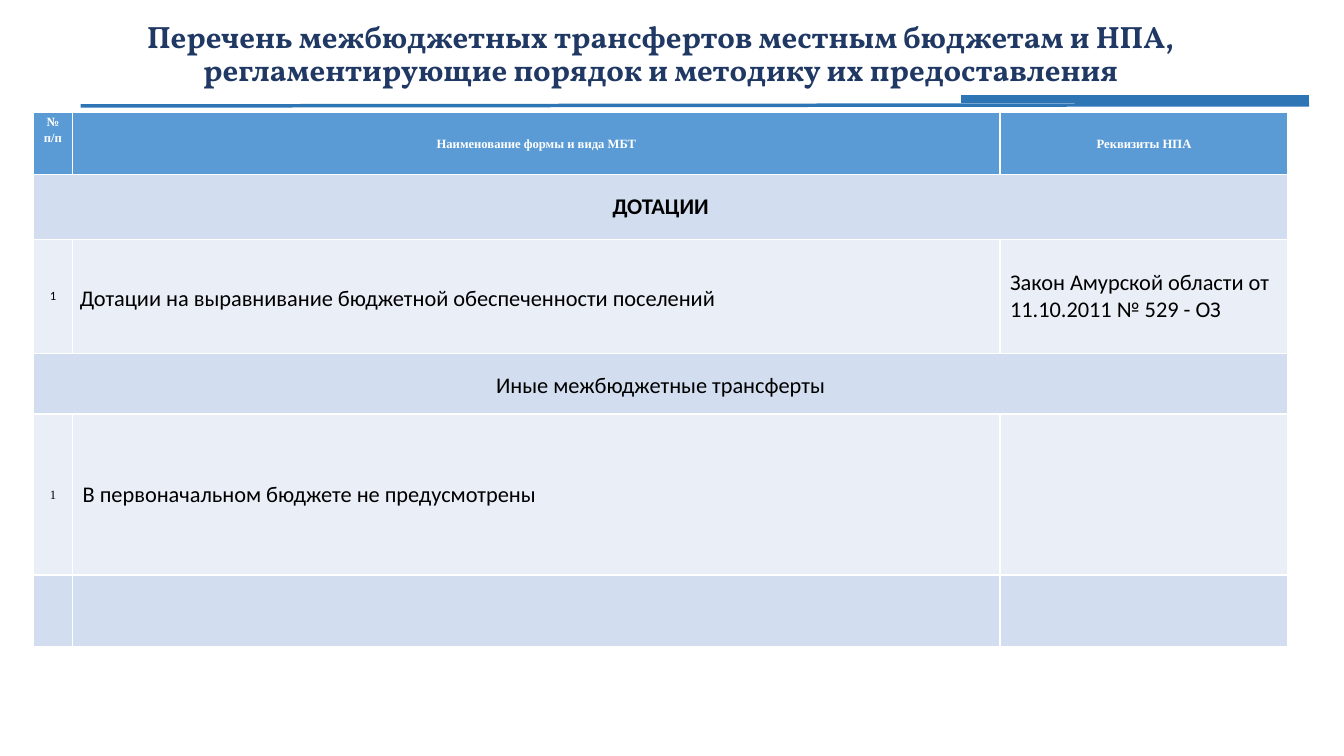
from lxml import etree
from pptx import Presentation
from pptx.dml.color import RGBColor
from pptx.enum.shapes import MSO_CONNECTOR
from pptx.enum.text import MSO_ANCHOR, PP_ALIGN
from pptx.oxml.ns import qn
from pptx.util import Cm, Pt

STRAIGHT = MSO_CONNECTOR.STRAIGHT
TOP, MIDDLE = MSO_ANCHOR.TOP, MSO_ANCHOR.MIDDLE
LEFT, CENTER, JUSTIFY = PP_ALIGN.LEFT, PP_ALIGN.CENTER, PP_ALIGN.JUSTIFY

THEME = {
    "title": RGBColor(0x20, 0x38, 0x64),
    "rule": RGBColor(0x2E, 0x75, 0xB6),
    "header": RGBColor(0x5B, 0x9B, 0xD5),
    "bands": [RGBColor(0xD2, 0xDE, 0xEF), RGBColor(0xEA, 0xEF, 0xF7)],
    "white": RGBColor(0xFF, 0xFF, 0xFF),
    "black": RGBColor(0, 0, 0),
    "title_size": 22,
    "body_size": 16,
    "small_size": 9,
    "title_font": "Vollkorn",
    "body_font": "Calibri",
    "small_font": "Times New Roman",
}
SMALL, BODY = THEME["small_size"], THEME["body_size"]
SERIF, SANS = THEME["small_font"], THEME["body_font"]


def add_run(p, text, size, font, color, bold):
    r = p.add_run()
    r.text = text
    r.font.size = Pt(size)
    r.font.name = font
    r.font.color.rgb = color
    r.font.bold = bold


prs = Presentation()
prs.slide_width, prs.slide_height = Cm(33.87), Cm(19.05)
s = prs.slides.add_slide(prs.slide_layouts[6])

sp = s.shapes.add_textbox(Cm(0.84), Cm(0.69), Cm(31.62), Cm(1.4))
tf = sp.text_frame
tf.word_wrap = True
tf.vertical_anchor = MIDDLE
p = tf.paragraphs[0]
p.alignment = CENTER
p.line_spacing = 0.9
add_run(p, "Перечень межбюджетных трансфертов местным бюджетам и НПА, "
        "регламентирующие порядок и методику их предоставления",
        THEME["title_size"], THEME["title_font"], THEME["title"], True)

col_widths = [0.99, 23.37, 7.26]
row_heights = [1.55, 1.65, 2.87, 1.52, 4.06, 1.8]
table = s.shapes.add_table(len(row_heights), len(col_widths), Cm(0.84), Cm(2.84),
                           Cm(sum(col_widths)), Cm(sum(row_heights))).table
for col, width in zip(table.columns, col_widths):
    col.width = Cm(width)
for i, (row, height) in enumerate(zip(table.rows, row_heights)):
    row.height = Cm(height)
    for cell in row.cells:
        cell.fill.solid()
        cell.fill.fore_color.rgb = THEME["bands"][(i - 1) % 2] if i else THEME["header"]
for i in (1, 3):
    table.cell(i, 0).merge(table.cell(i, 2))

# row, column, text, size, font, alignment, anchor, compact margins
entries = [
    (0, 0, "№ п/п", SMALL, SERIF, CENTER, TOP, True),
    (0, 1, "Наименование формы и вида МБТ", SMALL, SERIF, CENTER, MIDDLE, True),
    (0, 2, "Реквизиты НПА", SMALL, SERIF, CENTER, MIDDLE, True),
    (1, 0, "ДОТАЦИИ", BODY, SANS, CENTER, MIDDLE, False),
    (2, 0, "1", SMALL, SANS, CENTER, MIDDLE, False),
    (2, 1, "Дотации на выравнивание бюджетной обеспеченности поселений",
     BODY, SANS, JUSTIFY, MIDDLE, True),
    (2, 2, "Закон Амурской области от 11.10.2011 № 529 - ОЗ",
     BODY, SANS, LEFT, MIDDLE, False),
    (3, 0, "Иные межбюджетные трансферты", BODY, SANS, CENTER, MIDDLE, True),
    (4, 0, "1", SMALL, SERIF, CENTER, MIDDLE, True),
    (4, 1, "В первоначальном бюджете не предусмотрены",
     BODY, SANS, LEFT, MIDDLE, False),
]
for i, j, text, size, font, align, anchor, compact in entries:
    cell = table.cell(i, j)
    cell.vertical_anchor = anchor
    p = cell.text_frame.paragraphs[0]
    p.alignment = align
    if compact:
        cell.margin_left = cell.margin_right = Cm(0.18)
        cell.margin_top = cell.margin_bottom = 0
        p.line_spacing = 1.15
        p.space_after = Pt(10)
    add_run(p, text, size, font, THEME["black" if i else "white"], i < 2)

for x1, y1, x2, y2, weight in [(2.03, 2.67, 32.99, 2.64, 2.5),
                               (24.23, 2.49, 32.99, 2.49, 6)]:
    rule = s.shapes.add_connector(STRAIGHT, Cm(x1), Cm(y1), Cm(x2), Cm(y2))
    rule.line.color.rgb = THEME["rule"]
    rule.line.width = Pt(weight)
    etree.SubElement(rule._element.spPr, qn("a:effectLst"))

prs.save("out.pptx")
